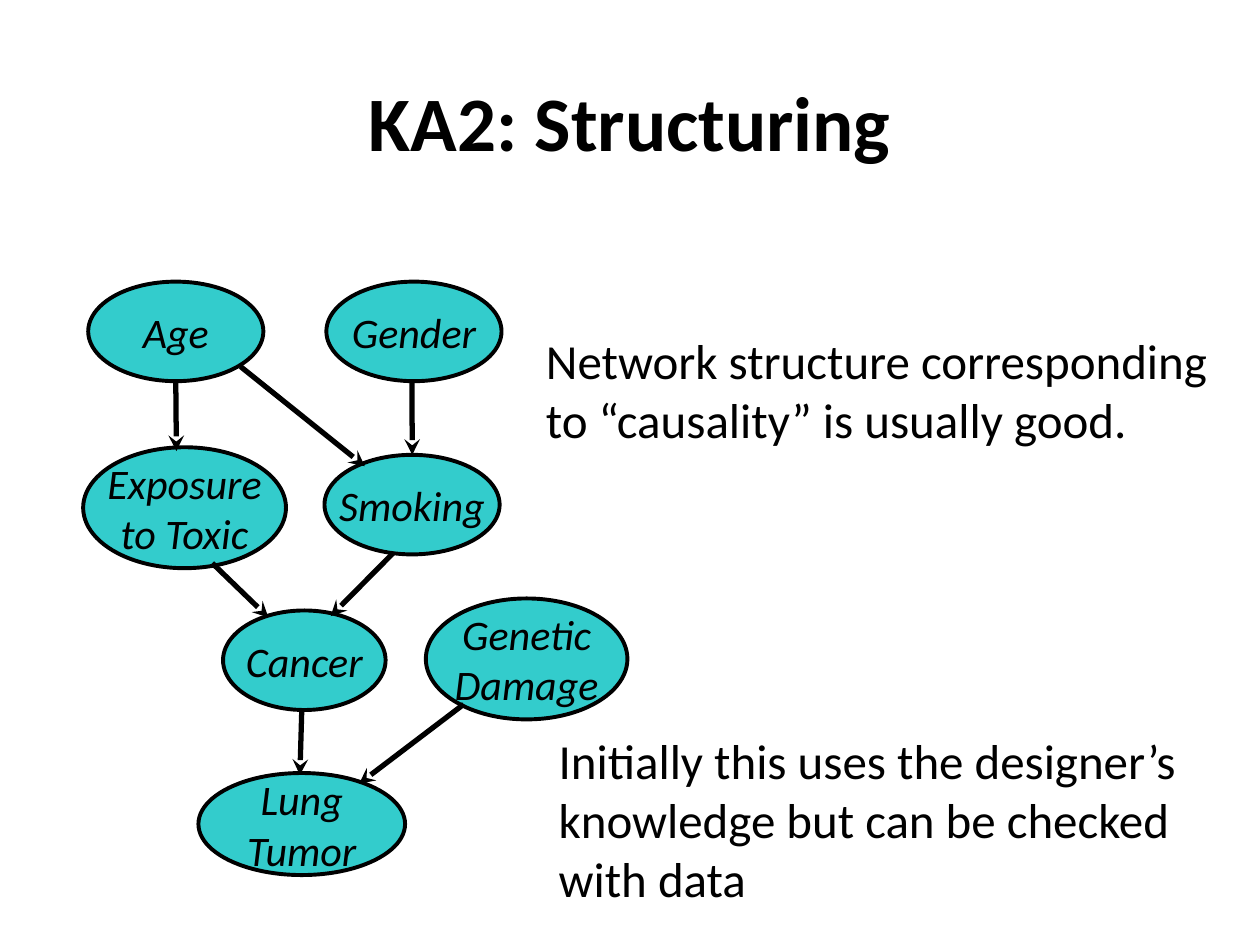
from lxml.etree import SubElement
from pptx import Presentation
from pptx.dml.color import RGBColor
from pptx.enum.shapes import MSO_CONNECTOR, MSO_SHAPE
from pptx.enum.text import MSO_ANCHOR, PP_ALIGN
from pptx.oxml.ns import qn
from pptx.util import Inches, Pt

COLS, ROWS = 100, 75
WIDE, HIGH = Inches(10), Inches(7.5)
HUES = {"ink": "000000", "node": "33CCCC", "page": "FFFFFF"}
TITLE = ("KA2: Structuring", (7.5, 3.3, 85, 12.5))
NODES = [
    (["Lung", "Tumor"], (15.75, 61.35, 16.4, 8.1)),
    (["Smoking"], (25.75, 36.1, 13.9, 7.9)),
    (["Exposure", "to Toxic"], (6.6, 35.5, 16.1, 9.6)),
    (["Gender"], (25.9, 22.35, 13.9, 7.9)),
    (["Age"], (7, 22.35, 13.9, 7.9)),
    (["Cancer"], (17.7, 48.45, 12.9, 7.9)),
    (["Genetic", "Damage"], (33.8, 47.5, 16, 9.6)),
]
LINKS = [
    (31.2, 43.9, 26.25, 48.9),
    (16.85, 44.7, 21.3, 49),
    (32.7, 30.35, 32.72, 36.1),
    (19.1, 29.1, 28.95, 37),
    (13.95, 30.1, 14, 35.8),
    (23.95, 56.4, 23.8, 61.5),
    (36.8, 55.9, 28.5, 62.2),
]
TEXTS = [
    (["Network structure corresponding", "to “causality” is usually good."],
     (42.35, 25.75, 55.3, 10.4), False),
    (["Initially this uses the designer’s",
      "knowledge but can be checked with data"],
     (43.35, 57.5, 52.5, 15.1), True),
]


def hue(name):
    return RGBColor.from_string(HUES[name])


def place(box):
    sides = (WIDE / COLS, HIGH / ROWS) * 2
    return [round(part * side) for part, side in zip(box, sides)]


def write(frame, lines, size, bold=False, slant=False,
          align=PP_ALIGN.LEFT, anchor=MSO_ANCHOR.TOP, wrap=False):
    frame.word_wrap = wrap
    frame.vertical_anchor = anchor
    for spot, line in enumerate(lines):
        para = frame.add_paragraph() if spot else frame.paragraphs[0]
        para.alignment = align
        run = para.add_run()
        run.text = line
        font = run.font
        font.name, font.size = "Calibri", Pt(size)
        font.bold, font.italic = bold, slant
        font.color.rgb = hue("ink")


def stroke(line, width):
    line.color.rgb = hue("ink")
    line.width = Pt(width)


def add_node(slide, lines, box):
    node = slide.shapes.add_shape(MSO_SHAPE.OVAL, *place(box))
    node.shadow.inherit = False
    node.fill.solid()
    node.fill.fore_color.rgb = hue("node")
    stroke(node.line, 2.25)
    write(node.text_frame, lines, 24, slant=True,
          align=PP_ALIGN.CENTER, anchor=MSO_ANCHOR.MIDDLE)


def add_link(slide, ends):
    link = slide.shapes.add_connector(MSO_CONNECTOR.STRAIGHT, *place(ends))
    stroke(link.line, 3)
    edge = link._element.spPr.find(qn("a:ln"))
    SubElement(edge, qn("a:tailEnd"), type="stealth")
    SubElement(link._element.spPr, qn("a:effectLst"))


def main():
    deck = Presentation()
    deck.slide_width, deck.slide_height = WIDE, HIGH
    slide = deck.slides.add_slide(deck.slide_layouts[5])
    slide.background.fill.solid()
    slide.background.fill.fore_color.rgb = hue("page")

    text, box = TITLE
    head = slide.shapes.title
    head.left, head.top, head.width, head.height = place(box)
    write(head.text_frame, [text], 44, bold=True, wrap=True,
          align=PP_ALIGN.CENTER, anchor=MSO_ANCHOR.MIDDLE)

    for lines, box in NODES:
        add_node(slide, lines, box)
    for ends in LINKS:
        add_link(slide, ends)
    for lines, box, wrap in TEXTS:
        area = slide.shapes.add_textbox(*place(box))
        write(area.text_frame, lines, 28, wrap=wrap)

    deck.save("out.pptx")


if __name__ == "__main__":
    main()
